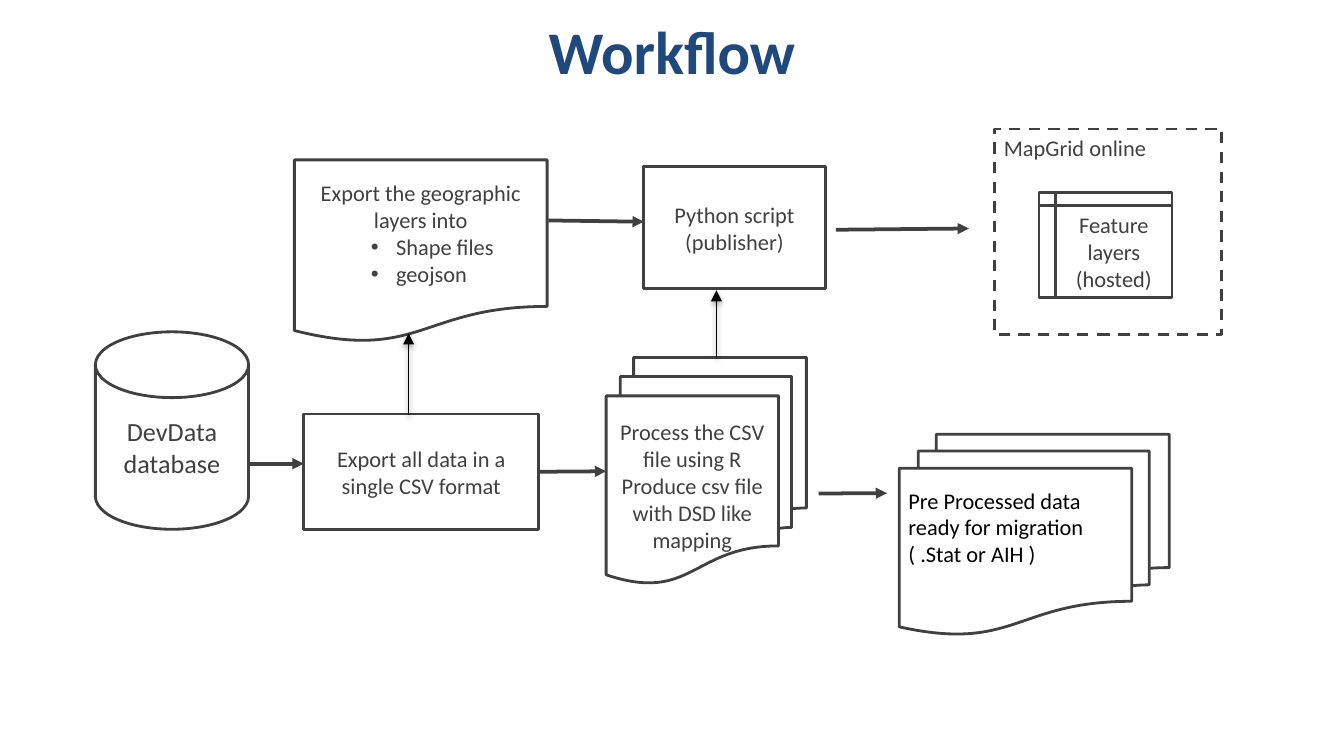
from dataclasses import dataclass

from lxml import etree
from pptx import Presentation
from pptx.dml.color import RGBColor
from pptx.enum import dml, shapes, text
from pptx.oxml import ns
from pptx.util import Pt


@dataclass(frozen=True)
class Theme:
    font: str = "Calibri"
    title: str = "1F497D"
    ink: str = "404040"
    black: str = "000000"
    title_size: float = 32.4
    large: float = 14
    body: float = 12
    outline: float = 1.5
    flow: float = 2
    thin: float = 0.75


THEME = Theme()
KIND = shapes.MSO_SHAPE
LEFT, CENTER = text.PP_ALIGN.LEFT, text.PP_ALIGN.CENTER
MIDDLE, TOP = text.MSO_ANCHOR.MIDDLE, text.MSO_ANCHOR.TOP
INSETS = (5, 3, 5, 3)
BULLET = "•"

SLIDE_SIZE = (720, 405)
TITLE = ("Workflow", (36, 7.2, 648, 39.6))

# name: kind, (left, top, width, height), paragraphs, settings that differ from the usual
STEPS = {
    "database": (KIND.FLOWCHART_MAGNETIC_DISK, (51.1, 177.8, 82.1, 105.8),
                 ["DevData database"], {"size": THEME.large, "insets": (7.2, 3.6, 7.2, 3.6)}),
    "csv export": (KIND.RECTANGLE, (162.7, 221.8, 126, 61.9),
                   ["Export all data in a single CSV format"], {}),
    "migration data": (KIND.FLOWCHART_MULTIDOCUMENT, (481.7, 232.6, 144.7, 107.3),
                       ["Pre Processed data ready for migration", "( .Stat or AIH )"],
                       {"align": LEFT, "color": THEME.black, "insets": (5, 3, 5, 25)}),
    "layer export": (KIND.FLOWCHART_DOCUMENT, (157.7, 85.7, 135.4, 97.9),
                     ["Export the geographic layers into",
                      BULLET + "Shape files", BULLET + "geojson"], {}),
    "publisher": (KIND.RECTANGLE, (344.9, 89.3, 97.2, 65.5), ["Python script (publisher)"], {}),
    "processing": (KIND.FLOWCHART_MULTIDOCUMENT, (324.7, 191.5, 107.3, 121),
                   ["Process the CSV file using R", "Produce csv file with DSD like mapping"], {}),
    "online platform": (KIND.RECTANGLE, (532.8, 69.1, 121.7, 110.2), ["MapGrid online"],
                        {"align": LEFT, "anchor": TOP, "dashed": True}),
    "feature layers": (KIND.FLOWCHART_INTERNAL_STORAGE, (556.6, 103.3, 71.3, 56.2),
                       ["Feature layers (hosted)"], {}),
}

# start, end, joined start (step, side)
FLOWS = [
    ((133.2, 248.4), (162.7, 248.4), None),
    ((288.7, 252.7), (324.7, 252.5), ("csv export", 3)),
    ((293.8, 118.1), (344.9, 118.8), None),
    ((447.8, 123.1), (519.1, 122.4), None),
    ((438.5, 264.4), (475.2, 264.2), None),
]
RISES = [
    ((383.8, 191.5), (383.8, 155.5)),
    ((218.9, 222.5), (218.9, 178.6)),
]


def color(value):
    return RGBColor.from_string(value)


def child(parent, tag, **attributes):
    return etree.SubElement(parent, ns.qn(tag), attributes)


def add_bullet(paragraph):
    properties = paragraph._p.get_or_add_pPr()
    properties.set("marL", str(Pt(49.5)))
    properties.set("indent", str(Pt(-13.5)))
    child(properties, "a:buFont", typeface="Arial")
    child(properties, "a:buChar", char=BULLET)


def write(shape, lines, size, ink, align=CENTER, anchor=MIDDLE, insets=INSETS, bold=False):
    frame = shape.text_frame
    frame.word_wrap = True
    frame.vertical_anchor = anchor
    frame.margin_left, frame.margin_top, frame.margin_right, frame.margin_bottom = map(Pt, insets)
    for index, line in enumerate(lines):
        paragraph = frame.add_paragraph() if index else frame.paragraphs[0]
        bulleted = line.startswith(BULLET)
        paragraph.alignment = LEFT if bulleted else align
        if bulleted:
            add_bullet(paragraph)
        run = paragraph.add_run()
        run.text = line.removeprefix(BULLET)
        run.font.name, run.font.size, run.font.bold = THEME.font, Pt(size), bold
        run.font.color.rgb = color(ink)


def add_step(slide, kind, box, lines, settings):
    options = {"size": THEME.body, "ink": settings.get("color", THEME.ink)}
    options.update((key, value) for key, value in settings.items()
                   if key not in ("color", "dashed"))
    shape = slide.shapes.add_shape(kind, *map(Pt, box))
    shape.shadow.inherit = False
    shape.fill.background()
    shape.line.color.rgb = color(THEME.ink)
    shape.line.width = Pt(THEME.outline)
    if settings.get("dashed"):
        shape.line.dash_style = dml.MSO_LINE.DASH
    write(shape, lines, **options)
    return shape


def add_arrow(slide, start, end, ink, width, shadowed=False):
    arrow = slide.shapes.add_connector(shapes.MSO_CONNECTOR.STRAIGHT, *map(Pt, start + end))
    arrow.line.color.rgb = color(ink)
    arrow.line.width = Pt(width)
    child(arrow.line._get_or_add_ln(), "a:tailEnd", type="triangle")
    effects = child(arrow._element.spPr, "a:effectLst")
    if shadowed:
        shadow = child(effects, "a:outerShdw", blurRad=str(Pt(3.1)), dist=str(Pt(1.6)),
                       dir="5400000", rotWithShape="0")
        child(child(shadow, "a:srgbClr", val=THEME.black), "a:alpha", val="38000")
    return arrow


def main():
    presentation = Presentation()
    presentation.slide_width, presentation.slide_height = map(Pt, SLIDE_SIZE)
    slide = presentation.slides.add_slide(presentation.slide_layouts[6])

    heading, box = TITLE
    write(slide.shapes.add_textbox(*map(Pt, box)), [heading],
          THEME.title_size, THEME.title, bold=True)

    steps = {name: add_step(slide, *step) for name, step in STEPS.items()}
    for start, end, joint in FLOWS:
        arrow = add_arrow(slide, start, end, THEME.ink, THEME.flow)
        if joint:
            name, side = joint
            arrow.begin_connect(steps[name], side)
    for start, end in RISES:
        add_arrow(slide, start, end, THEME.black, THEME.thin, shadowed=True)

    presentation.save("out.pptx")


if __name__ == "__main__":
    main()
